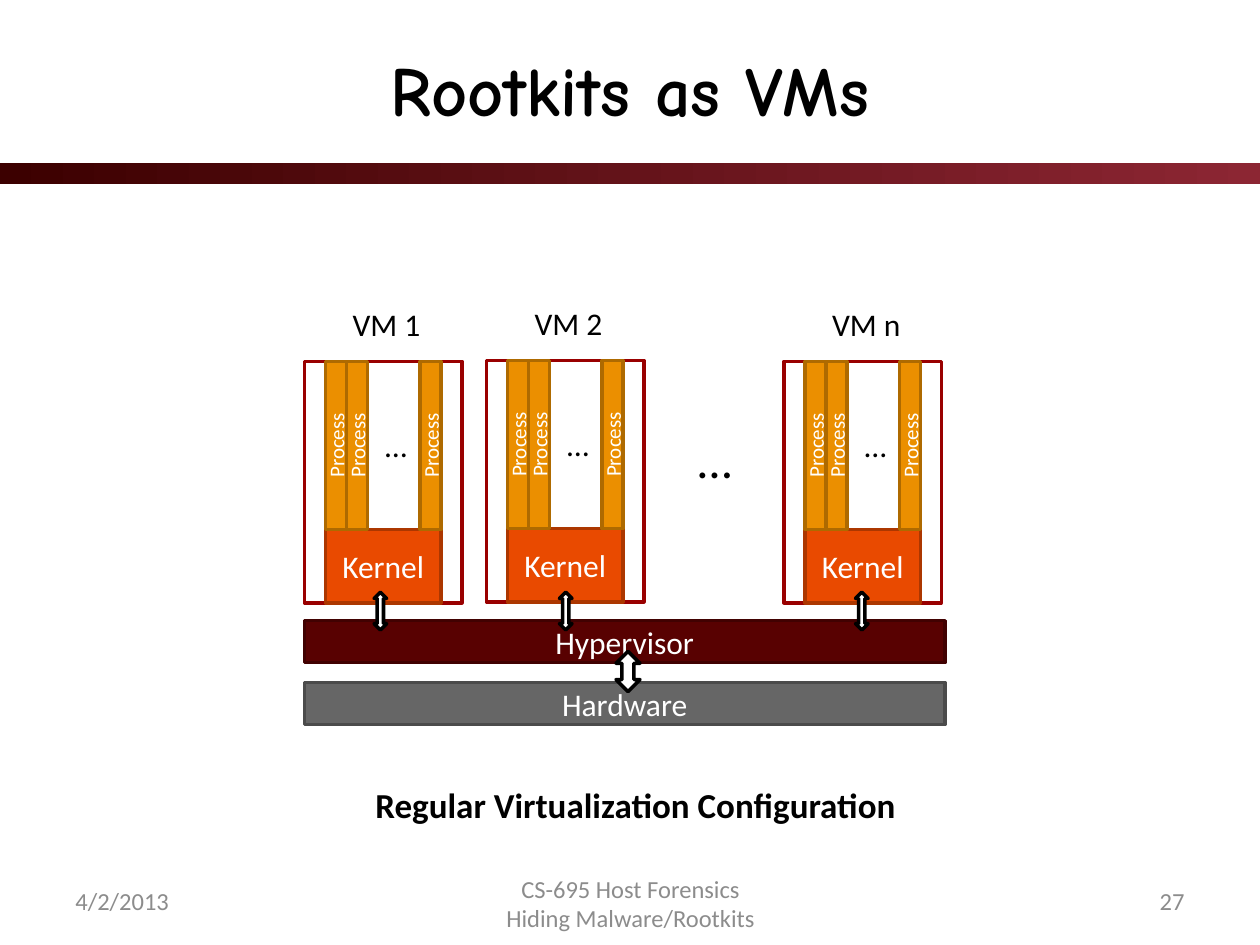
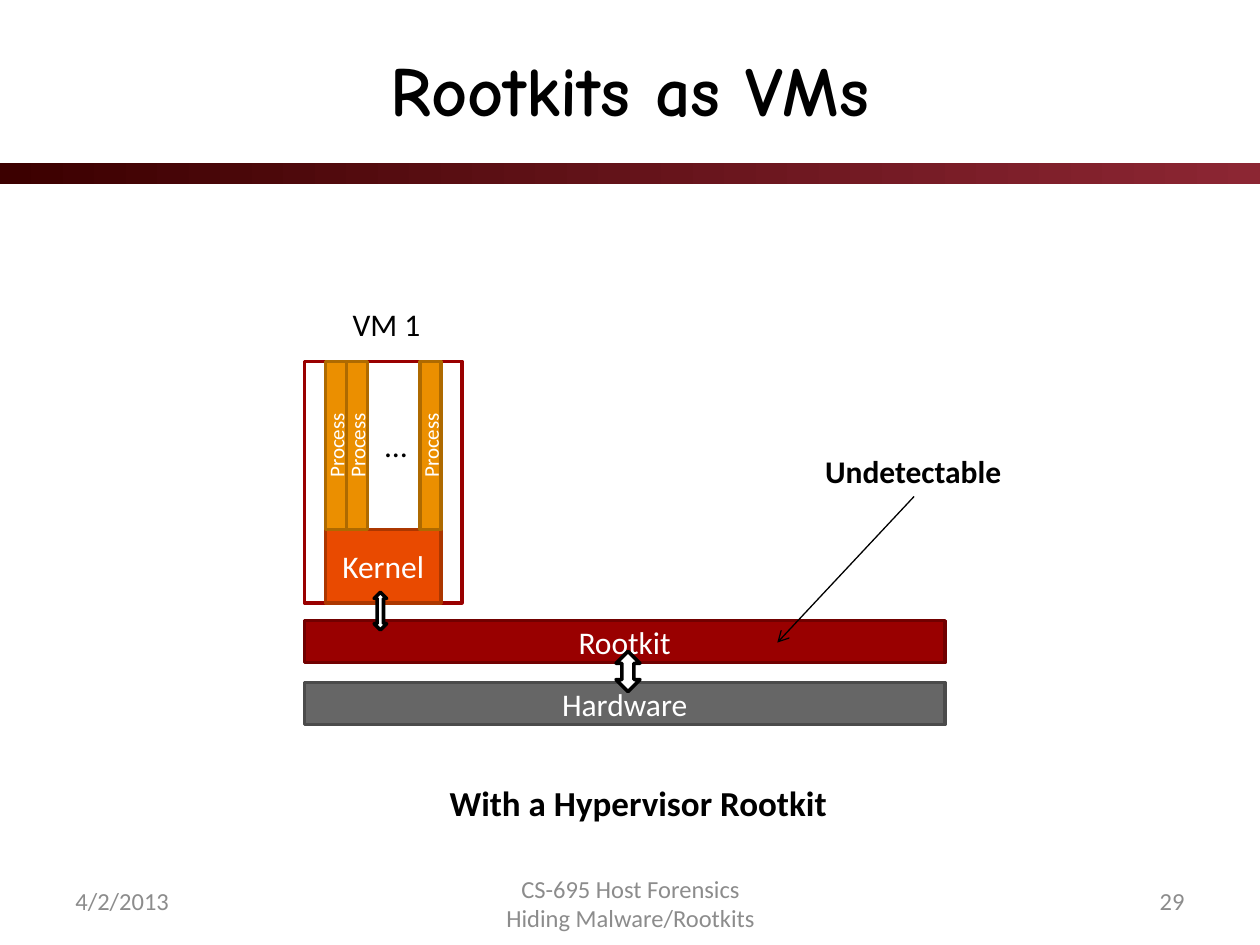
from dataclasses import dataclass
from typing import Any

from lxml.etree import SubElement
from pptx import Presentation
from pptx.dml.color import RGBColor
from pptx.enum.shapes import MSO_CONNECTOR, MSO_SHAPE
from pptx.enum.text import MSO_ANCHOR, MSO_AUTO_SIZE, PP_ALIGN
from pptx.oxml.ns import qn
from pptx.util import Pt

COLORS = {
    "black": "000000",
    "white": "FFFFFF",
    "footer": "8C8C8C",
    "band_start": "3C0000",
    "band_end": "8C2633",
    "frame_line": "990000",
    "kernel": "E94A00",
    "kernel_line": "AC3700",
    "process": "EB8F00",
    "process_line": "AE6A00",
    "hypervisor": "580101",
    "hypervisor_line": "410101",
    "rootkit": "990000",
    "rootkit_line": "710000",
    "hardware": "666666",
    "hardware_line": "4B4B4B",
}
BODY_FONT = "Calibri"
TITLE_FONT = "Comic Neue"
FOOTER_TEXT = "CS-695 Host Forensics\vHiding Malware/Rootkits"
DATE_TEXT = "4/2/2013"

# Shared geometry, in points
LAYER_LEFT, LAYER_WIDTH, LAYER_HEIGHT = 174, 366, 24
HYPERVISOR_TOP, HARDWARE_TOP = 354.7, 390
PROCESS_WIDTH, PROCESS_HEIGHT = 12, 96
PROCESS_OFFSETS = (12, 24, 66)


@dataclass(frozen=True)
class Box:
    left: float
    top: float
    width: float
    height: float

    def lengths(self) -> tuple:
        return Pt(self.left), Pt(self.top), Pt(self.width), Pt(self.height)


@dataclass(frozen=True)
class Machine:
    name: str
    left: float
    top: float
    arrow_left: float


@dataclass(frozen=True)
class Page:
    number: int
    layer: str
    machines: tuple[Machine, ...]
    caption: str
    caption_box: Box


FIRST_MACHINE = Machine("VM 1", 174, 206.5, 213.8)
PAGES = (
    Page(
        27,
        "hypervisor",
        (
            FIRST_MACHINE,
            Machine("VM 2", 278, 206, 319.7),
            Machine("VM n", 448, 206.5, 488.9),
        ),
        "Regular Virtualization Configuration",
        Box(207.4, 444.2, 314.6, 31.7),
    ),
    Page(
        29,
        "rootkit",
        (FIRST_MACHINE,),
        "With a Hypervisor Rootkit",
        Box(249.8, 442.8, 231.8, 31.7),
    ),
)


def rgb(color: str) -> RGBColor:
    return RGBColor.from_string(COLORS[color])


def set_values(target: Any, values: dict) -> None:
    for name, value in values.items():
        setattr(target, name, value)


def write(shape: Any, text: str, size: float, color: str, align: Any,
          bold: bool = False, font: str = BODY_FONT) -> None:
    shape.text_frame.text = text
    para = shape.text_frame.paragraphs[0]
    para.alignment = align
    for span in para.runs:
        set_values(span.font, {"name": font, "size": Pt(size), "bold": bold})
        span.font.color.rgb = rgb(color)


def add_block(shapes: Any, box: Box, fill: str, line: str, text: str = "",
              size: float = 18, kind: Any = MSO_SHAPE.RECTANGLE) -> Any:
    block = shapes.add_shape(kind, *box.lengths())
    block.shadow.inherit = False
    block.fill.solid()
    block.fill.fore_color.rgb = rgb(fill)
    block.line.color.rgb = rgb(line)
    block.line.width = Pt(2)
    if text:
        write(block, text, size, "white", PP_ALIGN.CENTER)
    return block


def add_label(shapes: Any, box: Box, text: str, size: float = 18,
              bold: bool = False) -> Any:
    label = shapes.add_textbox(*box.lengths())
    set_values(label.text_frame, {
        "word_wrap": False,
        "auto_size": MSO_AUTO_SIZE.SHAPE_TO_FIT_TEXT,
    })
    write(label, text, size, "black", PP_ALIGN.LEFT, bold)
    return label


def add_double_arrow(shapes: Any, box: Box) -> None:
    add_block(shapes, box, "white", "black", kind=MSO_SHAPE.UP_DOWN_ARROW)


def add_machine(shapes: Any, machine: Machine) -> None:
    parts = shapes.add_group_shape().shapes
    left, top = machine.left, machine.top
    add_block(parts, Box(left, top, 90, 138), "white", "frame_line")
    add_block(parts, Box(left + 12, top + PROCESS_HEIGHT, 66, 42),
              "kernel", "kernel_line", "Kernel")
    for offset in PROCESS_OFFSETS:
        process = add_block(
            parts, Box(left + offset, top, PROCESS_WIDTH, PROCESS_HEIGHT),
            "process", "process_line", "Process", 12)
        process.element.txBody.find(qn("a:bodyPr")).set("vert", "vert270")
    add_label(parts, Box(left + 39, top + 33.4, 27.4, 29), "…")
    add_label(parts, Box(left + 20.4, top - 36, 54, 29), machine.name)


def add_pointer(shapes: Any, label: Any, end_left: float, end_top: float) -> None:
    pointer = shapes.add_connector(
        MSO_CONNECTOR.STRAIGHT, Pt(522), Pt(283.7), Pt(end_left), Pt(end_top))
    pointer.begin_connect(label, 2)
    pointer.line.color.rgb = rgb("black")
    pointer.line.width = Pt(0.75)
    properties = pointer.element.spPr
    SubElement(properties.find(qn("a:ln")), qn("a:tailEnd"), type="arrow")
    SubElement(properties, qn("a:effectLst"))


def add_frame(slide: Any, number: int) -> None:
    # Gradient band below the title
    band = slide.shapes.add_shape(MSO_SHAPE.RECTANGLE, *Box(0, 93, 720, 12).lengths())
    band.shadow.inherit = False
    band.line.fill.background()
    band.fill.gradient()
    band.fill.gradient_angle = 0
    for stop, color in zip(band.fill.gradient_stops, ("band_start", "band_end")):
        stop.color.rgb = rgb(color)

    # Title
    title = slide.shapes.title
    place = Box(36, 10.8, 648, 79.2).lengths()
    set_values(title, dict(zip(("left", "top", "width", "height"), place)))
    title.text_frame.vertical_anchor = MSO_ANCHOR.MIDDLE
    write(title, "Rootkits as VMs", 40, "black", PP_ALIGN.CENTER, True, TITLE_FONT)

    # Date, course and page number
    footers = (
        (Box(36, 500.4, 132, 28.8), DATE_TEXT, PP_ALIGN.LEFT),
        (Box(270.7, 501.8, 179.3, 28.8), FOOTER_TEXT, PP_ALIGN.CENTER),
        (Box(552, 500.4, 132, 28.8), str(number), PP_ALIGN.RIGHT),
    )
    for box, text, align in footers:
        footer = slide.shapes.add_textbox(*box.lengths())
        set_values(footer.text_frame, {
            "word_wrap": True,
            "vertical_anchor": MSO_ANCHOR.MIDDLE,
        })
        write(footer, text, 14, "footer", align)


def add_page(deck: Any, page: Page) -> None:
    slide = deck.slides.add_slide(deck.slide_layouts[5])
    shapes = slide.shapes
    add_frame(slide, page.number)

    # Layers and the machines on top of them
    for layer, top in ((page.layer, HYPERVISOR_TOP), ("hardware", HARDWARE_TOP)):
        add_block(shapes, Box(LAYER_LEFT, top, LAYER_WIDTH, LAYER_HEIGHT),
                  layer, f"{layer}_line", layer.capitalize())
    for machine in page.machines:
        add_machine(shapes, machine)
    add_label(shapes, page.caption_box, page.caption, 20, True)

    # Arrows between the layers
    for machine in page.machines:
        add_double_arrow(shapes, Box(machine.arrow_left, 338.4, 7.2, 21.6))
    add_double_arrow(shapes, Box(352, 372.2, 13.7, 23))

    # Notes beside the machines
    if page.layer == "rootkit":
        label = add_label(shapes, Box(464.4, 254.9, 115.9, 28.8),
                          "Undetectable", bold=True)
        add_pointer(shapes, label, 444.2, 367.2)
    else:
        add_label(shapes, Box(391.7, 241.9, 33.8, 41), "…", 28)


def main() -> None:
    deck = Presentation()
    deck.slide_width, deck.slide_height = Pt(720), Pt(540)
    for page in PAGES:
        add_page(deck, page)
    deck.save("out.pptx")


if __name__ == "__main__":
    main()
